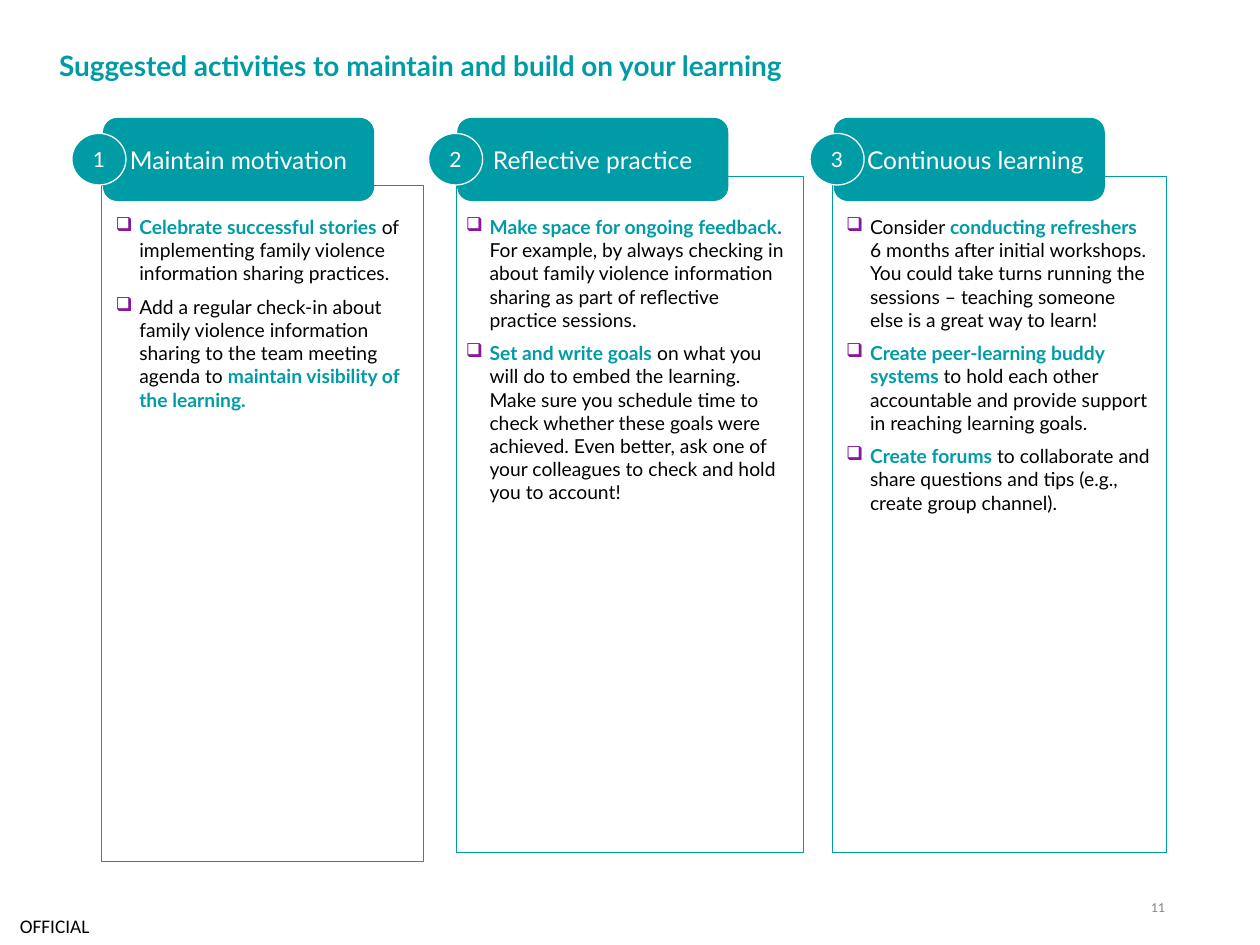
"""Build the slide of suggested activities to maintain and build on learning."""
from lxml import etree
from pptx import Presentation
from pptx import util as u
from pptx.dml.color import RGBColor
from pptx.enum import shapes, text
from pptx.oxml.ns import qn

TEAL = RGBColor(0x00, 0x9C, 0xA6)
BLUE = RGBColor(0x00, 0x72, 0xCE)
BLACK = RGBColor(0x00, 0x00, 0x00)
WHITE = RGBColor(0xFF, 0xFF, 0xFF)
GREY = RGBColor(0x7F, 0x7F, 0x7F)
PURPLE = RGBColor(0x87, 0x18, 0x9D)
INDENT = u.Cm(0.48)

COLUMNS = [
    {
        "title": "Maintain motivation", "title_inset": 0.25,
        "panel": (2.04, 3.74, 6.5), "header": 2.09, "badge": 1.45,
        "body": (2.08, 6.45, 7.16),
        "items": [
            [("Celebrate successful stories ", TEAL),
             ("of implementing family violence information sharing practices.", BLACK)],
            [("Add a regular check-in about family violence information sharing "
              "to the team meeting agenda to ", BLACK),
             ("maintain visibility of the learning.", TEAL)],
        ],
    },
    {
        "title": "Reflective practice", "title_inset": 0.25,
        "panel": (9.19, 3.56, 7.01), "header": 9.23, "badge": 8.64,
        "body": (9.14, 7.06, 7.92),
        "items": [
            [("Make space for ongoing feedback", TEAL),
             (". ", BLUE),
             ("For example, by always checking in about family violence information "
              "sharing as part of reflective practice sessions.", BLACK)],
            [("Set and write goals", TEAL),
             (" on what you will do to embed the learning. Make sure you schedule time "
              "to check whether these goals were achieved. Even better, ask one of your "
              "colleagues to check and hold you to account!", BLACK)],
        ],
    },
    {
        "title": "Continuous learning", "title_inset": 0.5,
        "panel": (16.78, 3.56, 6.74), "header": 16.82, "badge": 16.33,
        "body": (16.81, 6.68, 7.67),
        "items": [
            [("Consider ", BLACK),
             ("conducting refreshers ", TEAL),
             ("6 months after initial workshops. You could take turns running the "
              "sessions – teaching someone else is a great way to learn!", BLACK)],
            [("Create peer-learning buddy systems ", TEAL),
             ("to hold each other accountable and provide support in reaching "
              "learning goals.", BLACK)],
            [("Create forums ", TEAL),
             ("to collaborate and share questions and tips (e.g., create group "
              "channel).", BLACK)],
        ],
    },
]


def add_span(para, words, size, color, bold=False, font="Lato"):
    span = para.add_run()
    span.text = words
    span.font.name = font
    span.font.size = u.Pt(size)
    span.font.bold = bold
    span.font.color.rgb = color


def add_box(page, kind, left, top, width, height, fill, line, weight):
    box = page.shapes.add_shape(kind, u.Cm(left), u.Cm(top), u.Cm(width), u.Cm(height))
    box.shadow.inherit = False
    if fill is None:
        box.fill.background()
    else:
        box.fill.solid()
        box.fill.fore_color.rgb = fill
    box.line.color.rgb = line
    box.line.width = u.Pt(weight)
    box.text_frame.vertical_anchor = text.MSO_ANCHOR.MIDDLE
    box.text_frame.paragraphs[0].alignment = text.PP_ALIGN.CENTER
    return box


deck = Presentation()
deck.slide_width = u.Cm(25.4)
deck.slide_height = u.Cm(19.05)
page = deck.slides.add_slide(deck.slide_layouts[5])

title = page.shapes.title
title.left, title.top = u.Cm(1.19), u.Cm(0.49)
title.width, title.height = u.Cm(18.95), u.Cm(1.65)
frame = title.text_frame
frame.auto_size = text.MSO_AUTO_SIZE.NONE
frame.word_wrap = True
frame.vertical_anchor = text.MSO_ANCHOR.MIDDLE
frame.margin_left = frame.margin_right = frame.margin_top = frame.margin_bottom = 0
para = frame.paragraphs[0]
para.alignment = text.PP_ALIGN.LEFT
para.space_after = u.Pt(3.4)
add_span(para, "Suggested activities to maintain and build on your learning", 16, TEAL, True)

for number, column in enumerate(COLUMNS, 1):
    left, top, width = column["panel"]
    add_box(page, shapes.MSO_SHAPE.RECTANGLE, left, top, width, 13.62, None, TEAL, 0.25)

    header = add_box(page, shapes.MSO_SHAPE.ROUNDED_RECTANGLE,
                     column["header"], 2.39, 5.44, 1.65, TEAL, TEAL, 0.75)
    header.text_frame.margin_left = u.Cm(column["title_inset"])
    add_span(header.text_frame.paragraphs[0], column["title"], 14, WHITE)

    left, width, height = column["body"]
    body = page.shapes.add_textbox(u.Cm(left), u.Cm(4.22), u.Cm(width), u.Cm(height))
    frame = body.text_frame
    frame.word_wrap = True
    frame.auto_size = text.MSO_AUTO_SIZE.SHAPE_TO_FIT_TEXT
    for index, item in enumerate(column["items"]):
        para = frame.add_paragraph() if index else frame.paragraphs[0]
        para.space_after = u.Pt(6)
        properties = para._p.get_or_add_pPr()
        properties.set("marL", str(INDENT))
        properties.set("indent", str(-INDENT))
        bullet_color = etree.SubElement(properties, qn("a:buClr"))
        etree.SubElement(bullet_color, qn("a:srgbClr"), val=str(PURPLE))
        etree.SubElement(properties, qn("a:buChar"), char="❑")
        for words, color in item:
            add_span(para, words, 11, color, color != BLACK)

    badge = add_box(page, shapes.MSO_SHAPE.OVAL,
                    column["badge"], 2.69, 1.09, 1.04, TEAL, WHITE, 0.75)
    add_span(badge.text_frame.paragraphs[0], str(number), 12, WHITE)

for words, left, top, width, height, inset, size, color, font, align, anchor in [
    ("OFFICIAL", 0, 18.26, 2.21, 0.79, 0.4, 11, BLACK, "Calibri",
     text.PP_ALIGN.LEFT, text.MSO_ANCHOR.MIDDLE),
    ("11", 22.63, 18.14, 0.86, 0.51, 0, 7, GREY, "Lato",
     text.PP_ALIGN.RIGHT, text.MSO_ANCHOR.TOP),
]:
    box = page.shapes.add_textbox(u.Cm(left), u.Cm(top), u.Cm(width), u.Cm(height))
    frame = box.text_frame
    frame.margin_left = u.Cm(inset)
    frame.margin_right = frame.margin_top = frame.margin_bottom = 0
    frame.word_wrap = True
    frame.vertical_anchor = anchor
    frame.paragraphs[0].alignment = align
    add_span(frame.paragraphs[0], words, size, color, font=font)

deck.save("out.pptx")
